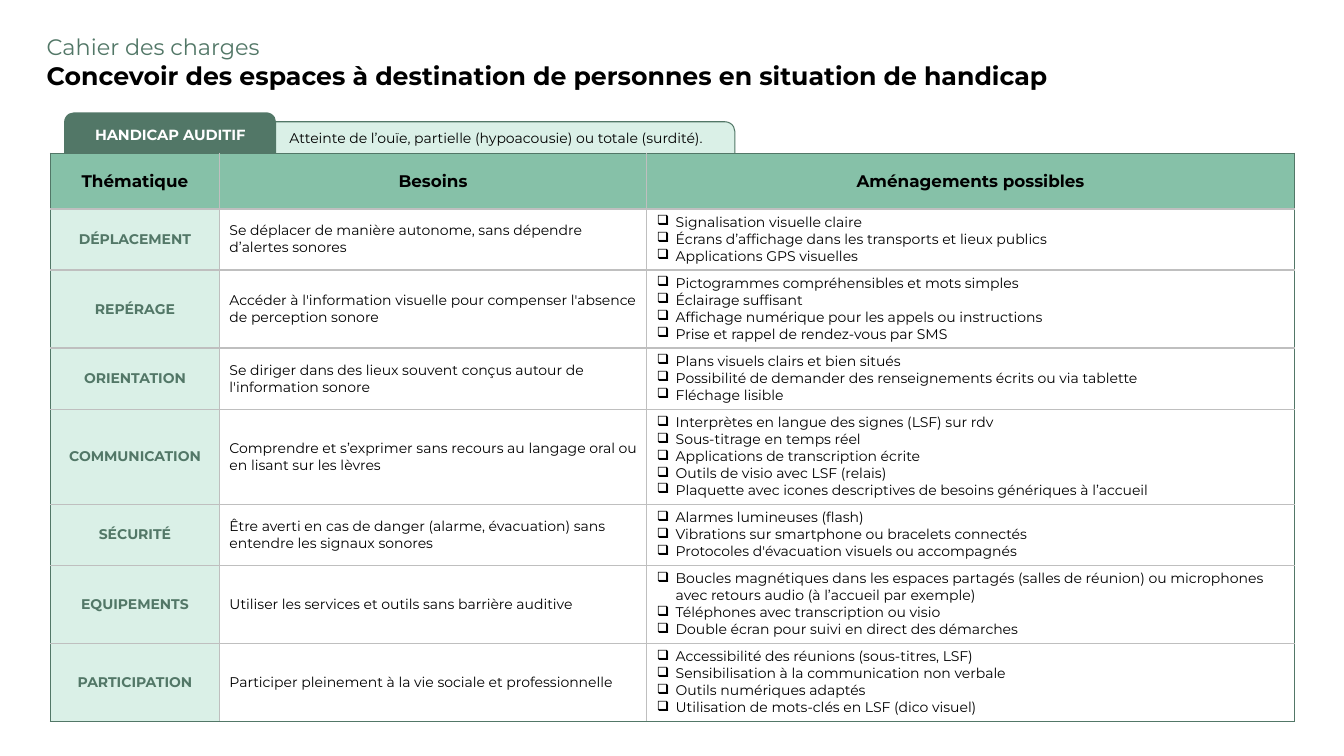
"""Build the slide listing needs and accommodations for hearing impairment."""
from dataclasses import dataclass

from lxml.etree import SubElement
from pptx import Presentation
from pptx.dml.color import RGBColor
from pptx.enum.shapes import MSO_SHAPE as Preset
from pptx.enum.text import MSO_ANCHOR as Anchor, MSO_AUTO_SIZE as AutoSize, PP_ALIGN as Align
from pptx.oxml.ns import qn
from pptx.slide import Slide
from pptx.table import _Cell as Cell
from pptx.text.text import _Paragraph as Paragraph
from pptx.util import Emu, Pt

EMU_PER_PX = 9525
FONT = "Montserrat"
COLORS = {
    "black": "000000",
    "white": "FFFFFF",
    "dark": "527767",
    "header": "86C1A8",
    "pale": "DAF0E7",
    "grid": "BFBFBF",
}
COLUMN_WIDTHS = (161, 407, 617)
ROW_HEIGHT = 53
HEADINGS = ("Thématique", "Besoins", "Aménagements possibles")


@dataclass(frozen=True)
class Tab:
    """A rounded tab partly tucked behind the table."""
    text: str
    box: tuple[int, int, int, int]
    fill: str
    line: str | None
    color: str
    size: float
    bold: bool
    align: Align
    anchor: Anchor
    left_inset: int
    bottom_inset: int


@dataclass(frozen=True)
class Theme:
    """One table row: a theme, its need and the possible accommodations."""
    name: str
    need: str
    options: tuple[str, ...]


TABS = (
    Tab("Atteinte de l’ouïe, partielle (hypoacousie) ou totale (surdité).",
        (247, 116, 453, 57), "pale", "dark", "black", 10, False,
        Align.LEFT, Anchor.TOP, 26, 5),
    Tab("HANDICAP AUDITIF", (61, 107, 202, 57), "dark", None, "white", 10.5, True,
        Align.CENTER, Anchor.MIDDLE, 10, 20),
)

THEMES = (
    Theme("DÉPLACEMENT", "Se déplacer de manière autonome, sans dépendre d’alertes sonores", (
        "Signalisation visuelle claire",
        "Écrans d’affichage dans les transports et lieux publics",
        "Applications GPS visuelles",
    )),
    Theme("REPÉRAGE",
          "Accéder à l'information visuelle pour compenser l'absence de perception sonore", (
              "Pictogrammes compréhensibles et mots simples",
              "Éclairage suffisant",
              "Affichage numérique pour les appels ou instructions",
              "Prise et rappel de rendez-vous par SMS",
          )),
    Theme("ORIENTATION",
          "Se diriger dans des lieux souvent conçus autour de l'information sonore", (
              "Plans visuels clairs et bien situés",
              "Possibilité de demander des renseignements écrits ou via tablette",
              "Fléchage lisible",
          )),
    Theme("COMMUNICATION",
          "Comprendre et s’exprimer sans recours au langage oral ou en lisant sur les lèvres", (
              "Interprètes en langue des signes (LSF) sur rdv",
              "Sous-titrage en temps réel",
              "Applications de transcription écrite",
              "Outils de visio avec LSF (relais)",
              "Plaquette avec icones descriptives de besoins génériques à l’accueil",
          )),
    Theme("SÉCURITÉ",
          "Être averti en cas de danger (alarme, évacuation) sans entendre les signaux sonores", (
              "Alarmes lumineuses (flash)",
              "Vibrations sur smartphone ou bracelets connectés",
              "Protocoles d'évacuation visuels ou accompagnés",
          )),
    Theme("EQUIPEMENTS", "Utiliser les services et outils sans barrière auditive", (
        "Boucles magnétiques dans les espaces partagés (salles de réunion) ou microphones "
        "avec retours audio (à l’accueil par exemple)",
        "Téléphones avec transcription ou visio",
        "Double écran pour suivi en direct des démarches",
    )),
    Theme("PARTICIPATION", "Participer pleinement à la vie sociale et professionnelle", (
        "Accessibilité des réunions (sous-titres, LSF)",
        "Sensibilisation à la communication non verbale",
        "Outils numériques adaptés",
        "Utilisation de mots-clés en LSF (dico visuel)",
    )),
)


def px(length: int) -> Emu:
    return Emu(length * EMU_PER_PX)


def rgb(name: str) -> RGBColor:
    return RGBColor.from_string(COLORS[name])


def write(paragraph: Paragraph, text: str, size: float, color: str = "black",
          bold: bool = False, align: Align = Align.LEFT) -> None:
    paragraph.text = text
    paragraph.alignment = align
    font = paragraph.font
    font.name, font.size, font.bold = FONT, Pt(size), bold
    font.color.rgb = rgb(color)


def add_bullet(paragraph: Paragraph) -> None:
    properties = paragraph._p.get_or_add_pPr()
    properties.set("marL", str(px(18)))
    properties.set("indent", str(px(-18)))
    SubElement(properties, qn("a:buChar")).set("char", "❑")


def set_borders(cell: Cell, edges: dict[str, bool]) -> None:
    properties = cell._tc.get_or_add_tcPr()
    for side, is_outer in edges.items():
        line = SubElement(properties, qn(f"a:ln{side}"), w=str(Pt(1)))
        fill = SubElement(line, qn("a:solidFill"))
        SubElement(fill, qn("a:srgbClr"), val=COLORS["dark" if is_outer else "grid"])


def fill_cell(cell: Cell, row: int, column: int, lines: tuple[str, ...]) -> None:
    set_borders(cell, {
        "L": column == 0,
        "R": column == len(HEADINGS) - 1,
        "T": row == 0,
        "B": row == len(THEMES),
    })
    is_label = row == 0 or column == 0
    cell.fill.solid()
    cell.fill.fore_color.rgb = rgb("header" if row == 0 else "pale" if column == 0 else "white")
    cell.vertical_anchor = Anchor.MIDDLE
    frame = cell.text_frame
    for index, text in enumerate(lines):
        paragraph = frame.add_paragraph() if index else frame.paragraphs[0]
        if row and column == 2:
            add_bullet(paragraph)
        write(paragraph, text, 10 if row else 12, "dark" if row and column == 0 else "black",
              is_label, Align.CENTER if is_label else Align.LEFT)


def add_tab(slide: Slide, tab: Tab) -> None:
    shape = slide.shapes.add_shape(Preset.ROUNDED_RECTANGLE, *map(px, tab.box))
    shape.shadow.inherit = False
    shape.fill.solid()
    shape.fill.fore_color.rgb = rgb(tab.fill)
    if tab.line:
        shape.line.color.rgb = rgb(tab.line)
        shape.line.width = Pt(0.75)
    else:
        shape.line.fill.background()
    frame = shape.text_frame
    frame.word_wrap = True
    frame.vertical_anchor = tab.anchor
    frame.margin_left, frame.margin_bottom = px(tab.left_inset), px(tab.bottom_inset)
    write(frame.paragraphs[0], tab.text, tab.size, tab.color, tab.bold, tab.align)


def add_needs_table(slide: Slide) -> None:
    rows = [tuple((heading,) for heading in HEADINGS)]
    rows += [((theme.name,), (theme.need,), theme.options) for theme in THEMES]
    graphic = slide.shapes.add_table(len(rows), len(HEADINGS), px(48), px(146),
                                     px(sum(COLUMN_WIDTHS)), px(ROW_HEIGHT * len(rows)))
    table = graphic.table
    table.first_row = table.horz_banding = False
    for column, width in zip(table.columns, COLUMN_WIDTHS):
        column.width = px(width)
    for row, cells in enumerate(rows):
        for column, lines in enumerate(cells):
            fill_cell(table.cell(row, column), row, column, lines)
    graphic.height = px(537)


def add_title(slide: Slide) -> None:
    frame = slide.shapes.add_textbox(px(35), px(27), px(982), px(64)).text_frame
    frame.word_wrap = False
    frame.auto_size = AutoSize.SHAPE_TO_FIT_TEXT
    write(frame.paragraphs[0], "Cahier des charges", 16, "dark")
    write(frame.add_paragraph(),
          "Concevoir des espaces à destination de personnes en situation de handicap",
          18, bold=True)


def main() -> None:
    presentation = Presentation()
    presentation.slide_width, presentation.slide_height = px(1280), px(720)
    slide = presentation.slides.add_slide(presentation.slide_layouts[6])
    for tab in TABS:
        add_tab(slide, tab)
    add_needs_table(slide)
    add_title(slide)
    presentation.save("out.pptx")


if __name__ == "__main__":
    main()
